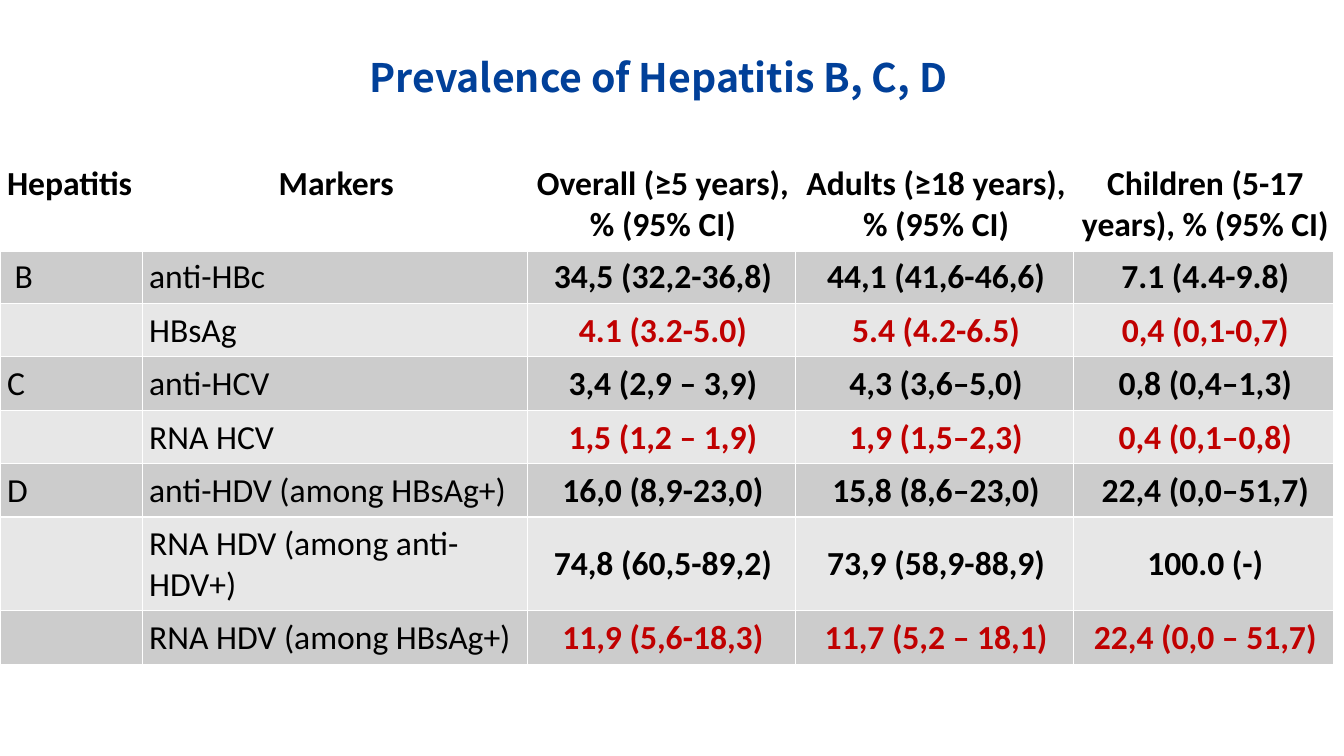
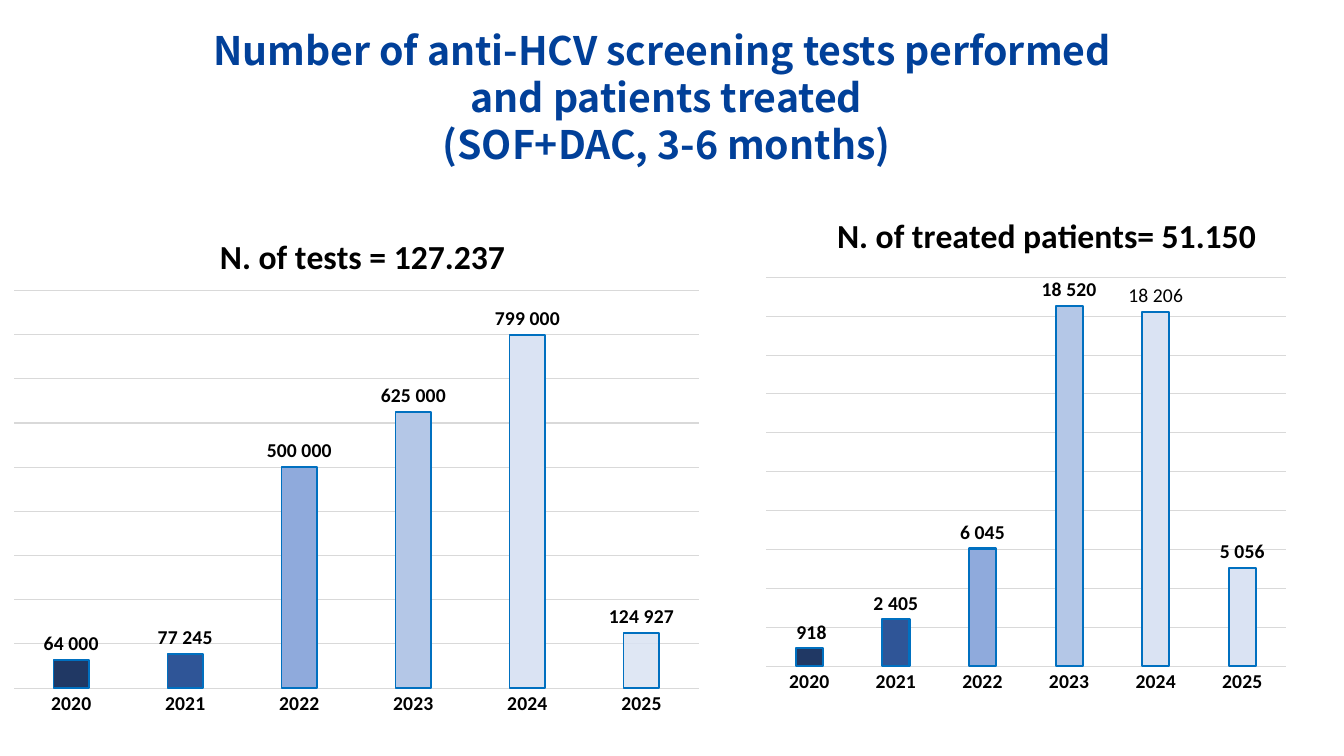
from pptx import Presentation
from pptx.chart.data import CategoryChartData
from pptx.dml.color import RGBColor
from pptx.enum.chart import XL_CHART_TYPE, XL_LABEL_POSITION, XL_TICK_MARK
from pptx.enum.text import MSO_ANCHOR, PP_ALIGN
from pptx.oxml import parse_xml
from pptx.oxml.ns import nsdecls
from pptx.util import Pt

PX = 9144
INK = {
    "title": "014099", "text": "000000", "red": "C00000", "white": "FFFFFF",
    "dark": "CCCCCC", "light": "E7E7E7", "grid": "D9D9D9", "edge": "0070C0",
}
BARS = ["203864", "2F5597", "8FAADC", "B4C7E7", "DAE3F3", "DAE3F3"]
YEARS = ["2020", "2021", "2022", "2023", "2024", "2025"]
HEAD_FONT, BODY_FONT = "Noto Sans CJK SC", "Calibri"
NUMBER = "#\\ ##0"

COLS = [141, 382, 266, 276, 258]
TALL, LOW = 93, 53
HEADS = ["Hepatitis", "Markers", "Overall (≥5 years), \n% (95% CI)",
         "Adults (≥18 years), % (95% CI)", "Children (5-17 years), % (95% CI)"]
ROWS = [
    [" В", "anti-HBc", "34,5 (32,2-36,8)", "44,1 (41,6-46,6)", "7.1 (4.4-9.8)"],
    ["", "HBsAg", "4.1 (3.2-5.0)", "5.4 (4.2-6.5)", "0,4 (0,1-0,7)"],
    ["С", "anti-HCV", "3,4 (2,9 – 3,9)", "4,3 (3,6–5,0)", "0,8 (0,4–1,3)"],
    ["", "RNA HCV", "1,5 (1,2 – 1,9)", "1,9 (1,5–2,3)", "0,4 (0,1–0,8)"],
    ["D", "anti-HDV (among HBsAg+)", "16,0 (8,9-23,0)", "15,8 (8,6–23,0)",
     "22,4 (0,0–51,7)"],
    ["", "RNA HDV (among anti-HDV+)", "74,8 (60,5-89,2)", "73,9 (58,9-88,9)",
     "100.0 (-)"],
    ["", "RNA HDV (among HBsAg+)", "11,9 (5,6-18,3)", "11,7 (5,2 – 18,1)",
     "22,4 (0,0 – 51,7)"],
]
RED_ROWS = {2, 4, 7}
TALL_ROWS = {0, 6}


def px(*sizes):
    return [size * PX for size in sizes]


def rgb(hue):
    return RGBColor.from_string(hue)


def style(font, size, hue=INK["text"], bold=True, name=BODY_FONT):
    font.size, font.bold, font.name = Pt(size), bold, name
    font.color.rgb = rgb(hue)


def write(frame, text, align, lead=None, **look):
    """Fill a text frame, one paragraph for each line."""
    for num, line in enumerate(text.split("\n")):
        par = frame.add_paragraph() if num else frame.paragraphs[0]
        par.alignment = align
        if lead:
            par.line_spacing = Pt(lead)
        run = par.add_run()
        run.text = line
        style(run.font, **look)


def add_title(slide, box, text):
    frame = slide.shapes.add_textbox(*px(*box)).text_frame
    frame.word_wrap = True
    frame.margin_top, = px(8)
    write(frame, text, PP_ALIGN.CENTER, lead=33.6, size=28,
          hue=INK["title"], name=HEAD_FONT)


def edge(cell, sides):
    """Draw white borders; sides maps L, R, T, B to a width in points."""
    props = cell._tc.get_or_add_tcPr()
    for num, (side, width) in enumerate(sides.items()):
        props.insert(num, parse_xml(
            f'<a:ln{side} {nsdecls("a")} w="{Pt(width)}"><a:solidFill>'
            f'<a:srgbClr val="{INK["white"]}"/></a:solidFill></a:ln{side}>'))


def fill_cell(cell, row, col, text):
    head, value = row == 0, col >= 2
    hue = "white" if head else "dark" if row % 2 else "light"
    cell.fill.solid()
    cell.fill.fore_color.rgb = rgb(INK[hue])
    (cell.margin_left, cell.margin_top,
     cell.margin_right, cell.margin_bottom) = px(7, 7, 4, 6)
    if value and not head:
        cell.vertical_anchor = MSO_ANCHOR.MIDDLE
    edge(cell, {"L": 1, "R": 1, "T": 3 if row == 1 else 1, "B": 3 if head else 1})
    if text:
        mid = value or head and col == 1
        ink = "red" if value and row in RED_ROWS else "text"
        write(cell.text_frame, text, PP_ALIGN.CENTER if mid else PP_ALIGN.LEFT,
              size=24, hue=INK[ink], bold=head or value)


def add_grid(slide, left, top):
    data = [HEADS] + ROWS
    highs = [TALL if row in TALL_ROWS else LOW for row in range(len(data))]
    table = slide.shapes.add_table(
        len(data), len(COLS), *px(left, top, sum(COLS), sum(highs))).table
    for col, wide in zip(table.columns, COLS):
        col.width = wide * PX
    for num, (row, high) in enumerate(zip(table.rows, highs)):
        row.height = high * PX
        for col, text in enumerate(data[num]):
            fill_cell(row.cells[col], num, col, text)


def lay_out(node, slot, inner=False, **place):
    """Pin a chart part at fractions of the chart box."""
    for old in node.xpath("c:layout"):
        node.remove(old)
    target = '<c:layoutTarget val="inner"/>' if inner else ""
    modes = "".join(f'<c:{key}Mode val="edge"/>' for key in "xy")
    spots = "".join(f'<c:{key} val="{val}"/>' for key, val in place.items())
    node.insert(slot, parse_xml(
        f'<c:layout {nsdecls("c")}><c:manualLayout>{target}{modes}{spots}'
        f'</c:manualLayout></c:layout>'))


def paint_bars(series, width):
    series.invert_if_negative = False
    for num, hue in enumerate(BARS):
        look = series.points[num].format
        look.fill.solid()
        look.fill.fore_color.rgb = rgb(hue)
        look.line.color.rgb = rgb(INK["edge"])
        look.line.width = Pt(width)


def set_axes(chart, top, step):
    cats, vals = chart.category_axis, chart.value_axis
    cats.major_tick_mark = XL_TICK_MARK.NONE
    style(cats.tick_labels.font, 14)
    vals.visible = False
    vals.minimum_scale, vals.maximum_scale, vals.major_unit = 0, top, step
    vals.has_major_gridlines = True
    for line in (cats.format.line, vals.major_gridlines.format.line):
        line.color.rgb = rgb(INK["grid"])
        line.width = Pt(0.75)


def add_bars(slide, box, title, vals, top, step, width, head, plot):
    """Place a column chart; head and plot are fractions of its box."""
    data = CategoryChartData(number_format=NUMBER)
    data.categories = YEARS
    data.add_series("Series 1", vals)
    chart = slide.shapes.add_chart(
        XL_CHART_TYPE.COLUMN_CLUSTERED, *px(*box), data).chart
    style(chart.font, 10, bold=False)
    chart.has_legend = False
    chart.has_title = True
    write(chart.chart_title.text_frame, title, PP_ALIGN.CENTER, size=24)
    set_axes(chart, top, step)

    bars = chart.plots[0]
    bars.gap_width, bars.overlap, bars.vary_by_categories = 219, -27, False
    paint_bars(bars.series[0], width)
    labels = bars.series[0].data_labels
    labels.show_value = True
    labels.position = XL_LABEL_POSITION.OUTSIDE_END
    labels.number_format, labels.number_format_is_linked = NUMBER, False
    style(labels.font, 14)

    root = chart._chartSpace
    lay_out(root.xpath("c:chart/c:title")[0], 1, x=head[0], y=head[1])
    lay_out(root.xpath("c:chart/c:plotArea")[0], 0, inner=True,
            **dict(zip("xywh", plot)))
    return chart


def fade(chart, point, share):
    """Make one bar partly clear."""
    query = f'.//c:dPt[c:idx/@val="{point}"]/c:spPr/a:solidFill/a:srgbClr'
    chart._chartSpace.xpath(query)[0].append(
        parse_xml(f'<a:alpha {nsdecls("a")} val="{share * 1000}"/>'))


def table_slide(slide):
    add_title(slide, (10, 45, 1286, 57), "Prevalence of Hepatitis B, C, D")
    add_grid(slide, 0, 155)


def chart_slide(slide):
    add_title(slide, (18, 18, 1286, 151),
              "Number of anti-HCV screening tests performed \n"
              "and patients treated\n(SOF+DAC, 3-6 months)")
    tests = add_bars(
        slide, (0, 200, 707, 519), "N. of tests = 127.237",
        [64000, 77245, 500000, 625000, 799000, 124927], 900000, 100000, 1.25,
        head=(0.3, 0.05), plot=(0.02, 0.17, 0.96, 0.76))
    fade(tests, 5, 85)
    cured = add_bars(
        slide, (749, 200, 537, 501), "N. of treated patients= 51.150",
        [918, 2405, 6045, 18520, 18206, 5056], 20000, 2000, 1.5,
        head=(0.14, 0.01), plot=(0.02, 0.15, 0.96, 0.77))
    label = cured.plots[0].series[0].points[4].data_label
    write(label.text_frame, "18 206", PP_ALIGN.CENTER, size=14, bold=False)
    label.position = XL_LABEL_POSITION.OUTSIDE_END


def main():
    deck = Presentation()
    deck.slide_width, deck.slide_height = px(1333, 750)
    for build in (table_slide, chart_slide):
        build(deck.slides.add_slide(deck.slide_layouts[6]))
    deck.save("out.pptx")


if __name__ == "__main__":
    main()
